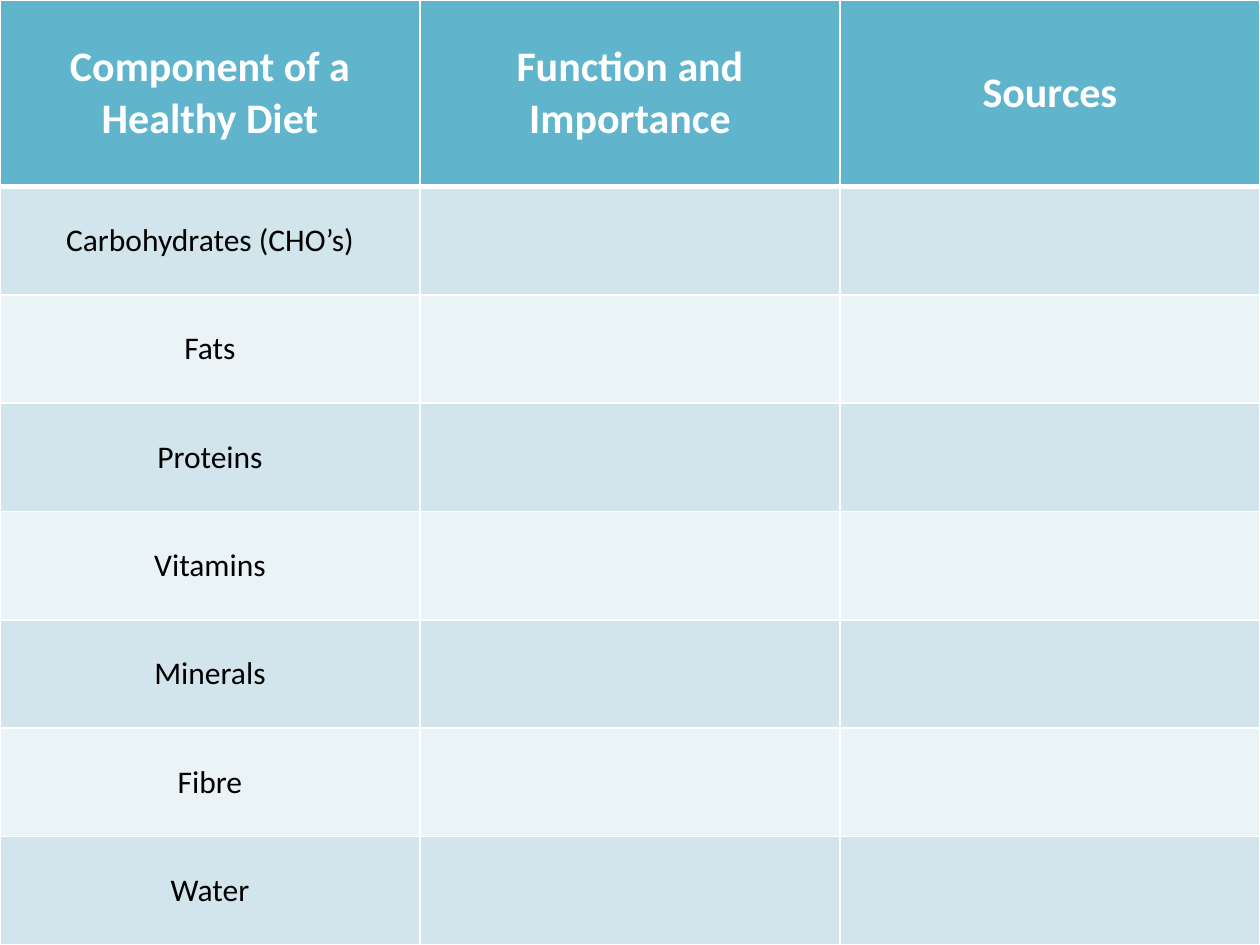
from lxml import etree
from pptx import Presentation
from pptx.dml.color import RGBColor
from pptx.enum.text import MSO_ANCHOR, PP_ALIGN
from pptx.oxml.ns import qn
from pptx.util import Inches, Pt

HEADINGS = ["Component of a Healthy Diet", "Function and Importance", "Sources"]
COMPONENTS = ["Carbohydrates (CHO’s)", "Fats", "Proteins", "Vitamins",
              "Minerals", "Fibre", "Water"]
HEADER_HEIGHT = 1.48
HEADER_FILL = "60B5CC"
BAND_FILLS = ["D2E5EC", "EAF3F6"]
WHITE, BLACK = "FFFFFF", "000000"


def color(value):
    return RGBColor.from_string(value)


def set_borders(cell, **widths):
    """Draw white cell borders; widths are points keyed by side L, R, T, B."""
    properties = cell._tc.get_or_add_tcPr()
    for side in "LRTB":
        line = etree.SubElement(properties, qn(f"a:ln{side}"),
                                w=str(Pt(widths.get(side, 1))))
        fill = etree.SubElement(line, qn("a:solidFill"))
        etree.SubElement(fill, qn("a:srgbClr"), val=WHITE)


def set_fill(cell, value):
    cell.fill.solid()
    cell.fill.fore_color.rgb = color(value)


def write_cell(cell, text, size, text_color, bold):
    cell.vertical_anchor = MSO_ANCHOR.MIDDLE
    para = cell.text_frame.paragraphs[0]
    para.alignment = PP_ALIGN.CENTER
    span = para.add_run()
    span.text = text
    span.font.name = "Calibri"
    span.font.size = Pt(size)
    span.font.bold = bold
    span.font.color.rgb = color(text_color)


def add_diet_table(page, left, top, width, height):
    frame = page.shapes.add_table(
        len(COMPONENTS) + 1, len(HEADINGS),
        Inches(left), Inches(top), Inches(width), Inches(height))
    table = frame.table
    for column in table.columns:
        column.width = Inches(width / len(HEADINGS))
    for row in table.rows:
        row.height = Inches((height - HEADER_HEIGHT) / len(COMPONENTS))
    table.rows[0].height = Inches(HEADER_HEIGHT)

    for cell, heading in zip(table.rows[0].cells, HEADINGS):
        set_borders(cell, B=3)
        set_fill(cell, HEADER_FILL)
        write_cell(cell, heading, 24, WHITE, True)

    for index, component in enumerate(COMPONENTS):
        for cell in table.rows[index + 1].cells:
            set_borders(cell, T=3 if index == 0 else 1)
            set_fill(cell, BAND_FILLS[index % 2])
        write_cell(table.cell(index + 1, 0), component, 18, BLACK, False)


def main():
    deck = Presentation()
    deck.slide_width, deck.slide_height = Inches(10), Inches(7.5)
    page = deck.slides.add_slide(deck.slide_layouts.get_by_name("Blank"))
    add_diet_table(page, 0, 0, 10, 7.5)
    deck.save("out.pptx")


if __name__ == "__main__":
    main()
